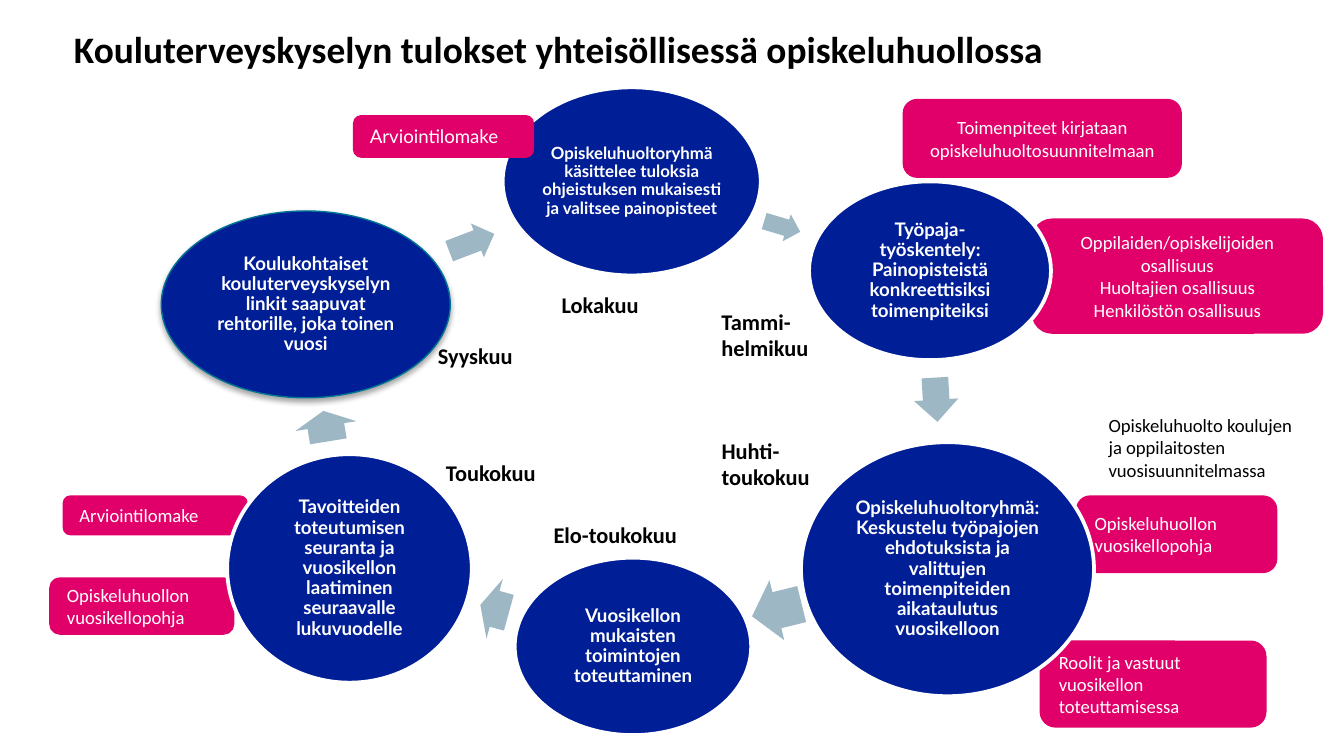
from lxml import etree
from pptx import Presentation
from pptx.dml.color import RGBColor
from pptx.enum.shapes import MSO_SHAPE
from pptx.enum.text import MSO_ANCHOR, PP_ALIGN
from pptx.oxml.ns import qn
from pptx.util import Inches, Pt

LEFT, CENTER, JUSTIFY = PP_ALIGN.LEFT, PP_ALIGN.CENTER, PP_ALIGN.JUSTIFY
TOP, MIDDLE = MSO_ANCHOR.TOP, MSO_ANCHOR.MIDDLE
ROUNDED, ELLIPSE = MSO_SHAPE.ROUNDED_RECTANGLE, MSO_SHAPE.OVAL
ARROW = MSO_SHAPE.RIGHT_ARROW
PINK, NAVY, TEAL, GREY_BLUE = "E10069", "001E96", "007593", "9EB7C4"
WHITE, BLACK = "FFFFFF", "000000"
BODY_FONT, CYCLE_FONT = "Calibri", "Lato"

# Grid cells are a tenth of an inch; boxes are (column, row, columns, rows).
CELL = Inches(0.1)
SLIDE_BOX = (0, 0, 100, 56.25)
CYCLE_BOX = (12, 6.5, 69.4, 48.2)

# Each step: ellipse box, text, text size
STEPS = [
    ((25.4, 0, 19.2, 14), "Opiskeluhuoltoryhmä käsittelee tuloksia ohjeistuksen "
     "mukaisesti ja valitsee painopisteet", 9),
    ((48.2, 7, 18, 13.3), "Työpaja-työskentely: Painopisteistä konkreettisiksi "
     "toimenpiteiksi", 10),
    ((47.6, 26.4, 21.8, 18.9), "Opiskeluhuoltoryhmä: Keskustelu työpajojen "
     "ehdotuksista ja valittujen toimenpiteiden aikataulutus vuosikelloon", 10),
    ((26.3, 35, 17.6, 13.2), "Vuosikellon mukaisten toimintojen toteuttaminen", 10),
    ((4.9, 27.3, 18.2, 17), "Tavoitteiden toteutumisen seuranta ja vuosikellon "
     "laatiminen seuraavalle lukuvuodelle", 10),
    ((0, 9.2, 21.5, 13.9), "Koulukohtaiset kouluterveyskyselyn linkit saapuvat "
     "rehtorille, joka toinen vuosi", 10),
]
# Each arrow: box, rotation
ARROWS = [
    ((44.8, 9.3, 2.8, 2.1), 16.7),
    ((56, 21.6, 3.3, 3.3), 86.6),
    ((43.9, 36.6, 3.8, 4.6), 166.1),
    ((23.7, 36.5, 2.2, 4.6), 195.3),
    ((11.1, 22.9, 2.3, 4.6), 260.8),
    ((21.3, 10.2, 3.6, 2.7), 339),
]
MONTHS = [
    ((19.6, 18.5, 9.4, 3), "Syyskuu"),
    ((28.8, 14.7, 13.6, 3), "Lokakuu"),
    ((40.7, 15.9, 11.7, 5), "Tammi-helmikuu"),
    ((40.7, 25.5, 9.9, 5), "Huhti-toukokuu"),
    ((28.2, 31.8, 13.1, 3), "Elo-toukokuu"),
    ((20.2, 27.2, 10, 3), "Toukokuu"),
]
# Each callout: box, text, alignment
CALLOUTS = [
    ((67.3, 7.5, 20.5, 5.6), "Toimenpiteet kirjataan opiskeluhuoltosuunnitelmaan", CENTER),
    ((4.8, 37, 13.5, 2.7), "Arviointilomake", LEFT),
    ((3.8, 43.1, 13.5, 4), "Opiskeluhuollon vuosikellopohja", LEFT),
    ((80.2, 37, 14.7, 5.5), "Opiskeluhuollon vuosikellopohja", JUSTIFY),
    ((77.5, 47.8, 16.6, 6.2), "Roolit ja vastuut vuosikellon toteuttamisessa", LEFT),
    ((76.9, 16.4, 21.4, 8.3), "Oppilaiden/opiskelijoiden osallisuus\n"
     "Huoltajien osallisuus\nHenkilöstön osallisuus", CENTER),
]


def color(hex_string):
    return RGBColor.from_string(hex_string)


def within(outer, inner):
    """Turn a box relative to outer into left, top, width and height in EMU."""
    column, row, columns, rows = inner
    cells = (outer[0] + column, outer[1] + row, columns, rows)
    return [round(cell * CELL) for cell in cells]


def write(shape, text, size, font=BODY_FONT, fill=BLACK, bold=False, align=LEFT,
          anchor=MIDDLE, insets=(0.1, 0.05), spacing=None):
    frame = shape.text_frame
    frame.text = text
    frame.word_wrap = True
    frame.vertical_anchor = anchor
    frame.margin_left = frame.margin_right = Inches(insets[0])
    frame.margin_top = frame.margin_bottom = Inches(insets[1])
    for paragraph in frame.paragraphs:
        paragraph.alignment = align
        if spacing:
            paragraph.line_spacing = spacing
        for run in paragraph.runs:
            run.font.name = font
            run.font.size = Pt(size)
            run.font.bold = bold
            run.font.color.rgb = color(fill)


def add_preset(slide, preset, position, fill, line=None, line_width=2):
    shape = slide.shapes.add_shape(preset, *position)
    shape.shadow.inherit = False
    shape.fill.solid()
    shape.fill.fore_color.rgb = color(fill)
    if line:
        shape.line.color.rgb = color(line)
        shape.line.width = Pt(line_width)
    else:
        shape.line.fill.background()
    return shape


def add_soft_shadow(shape):
    effects = shape.element.spPr.find(qn("a:effectLst"))
    shadow = etree.SubElement(effects, qn("a:outerShdw"), blurRad=str(Pt(3.1)),
                              dist=str(Pt(1.8)), dir="5400000", rotWithShape="0")
    shade = etree.SubElement(shadow, qn("a:srgbClr"), val=BLACK)
    etree.SubElement(shade, qn("a:alpha"), val="35000")


def add_label(slide, position, text, size, **style):
    write(slide.shapes.add_textbox(*position), text, size, **style)


def add_callout(slide, position, text, align=LEFT, font=BODY_FONT):
    shape = add_preset(slide, ROUNDED, position, PINK, PINK)
    write(shape, text, 10, font=font, fill=WHITE, align=align)


def add_cycle(slide, box):
    """Draw the yearly cycle: steps, the arrows after them, and month labels."""
    for (step_box, text, size), (arrow_box, rotation) in zip(STEPS, ARROWS):
        is_start = step_box == STEPS[-1][0]
        line, line_width = (TEAL, 0.75) if is_start else (WHITE, 2)
        step = add_preset(slide, ELLIPSE, within(box, step_box), NAVY, line, line_width)
        if is_start:
            add_soft_shadow(step)
        write(step, text, size, font=CYCLE_FONT, fill=WHITE, bold=True,
              align=CENTER, insets=(0.01, 0.01), spacing=0.9)
        arrow = add_preset(slide, ARROW, within(box, arrow_box), GREY_BLUE)
        arrow.adjustments[0], arrow.adjustments[1] = 0.6, 0.5
        arrow.rotation = rotation
    for month_box, month in MONTHS:
        add_label(slide, within(box, month_box), month, 12, bold=True, anchor=TOP)


def add_cycle_slide(presentation, box):
    slide = presentation.slides.add_slide(presentation.slide_layouts[6])
    for callout_box, text, align in CALLOUTS:
        add_callout(slide, within(box, callout_box), text, align)
    add_cycle(slide, CYCLE_BOX)
    add_callout(slide, within(box, (26.4, 8.7, 13.2, 2.9)), "Arviointilomake",
                font=CYCLE_FONT)
    add_label(slide, within(box, (4.8, 0.8, 83.8, 6.1)),
              "Kouluterveyskyselyn tulokset yhteisöllisessä opiskeluhuollossa", 20,
              bold=True, insets=(0.07, 0.04), spacing=0.9)
    add_label(slide, within(box, (81.5, 30.3, 15.8, 6.1)),
              "Opiskeluhuolto koulujen ja oppilaitosten vuosisuunnitelmassa", 10,
              anchor=TOP)


def main():
    presentation = Presentation()
    presentation.slide_width = round(SLIDE_BOX[2] * CELL)
    presentation.slide_height = round(SLIDE_BOX[3] * CELL)
    add_cycle_slide(presentation, SLIDE_BOX)
    presentation.save("out.pptx")


if __name__ == "__main__":
    main()
